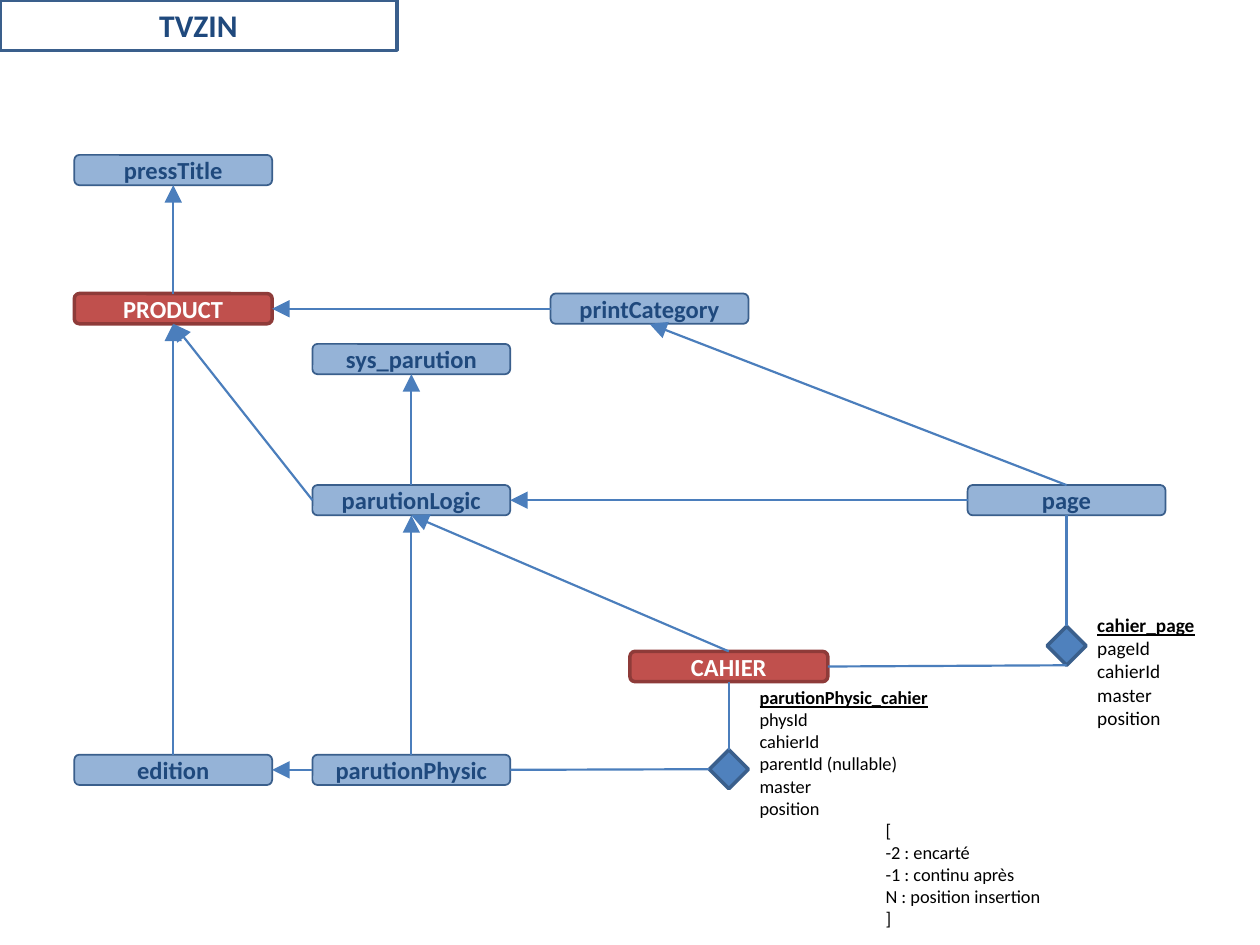
from lxml import etree
from pptx import Presentation
from pptx import util as u
from pptx.dml.color import RGBColor
from pptx.enum import shapes, text
from pptx.oxml.ns import qn

FONT = "Calibri"
BLUE, PALE, RED, NAVY = "4F81BD", "95B3D7", "C0504D", "1F497D"
EDGE, RED_EDGE, LINK = "3A5F8C", "8E3B39", "4B7EBC"
BOX_W, BOX_H, DIAMOND = 1.57, 0.24, 0.31
TOP, LEFT, BOTTOM, RIGHT = range(4)  # connection sites


def rgb(value):
    return RGBColor.from_string(value)


def write(p, content, size, color, bold=False, underline=False, align=None):
    p.alignment = align
    r = p.add_run()
    r.text = content
    r.font.name, r.font.size = FONT, u.Pt(size)
    r.font.bold, r.font.underline = bold, underline
    r.font.color.rgb = rgb(color)


prs = Presentation()
prs.slide_width, prs.slide_height = u.Inches(10), u.Inches(7.5)
s = prs.slides.add_slide(prs.slide_layouts[6])

# Title, entity boxes and association diamonds
RECT, ROUND, DIAM = (shapes.MSO_SHAPE.RECTANGLE, shapes.MSO_SHAPE.ROUNDED_RECTANGLE,
                     shapes.MSO_SHAPE.DIAMOND)
title = (RECT, 3.15, 0.4, None, EDGE, 2, 18, NAVY)
entity = (ROUND, BOX_W, BOX_H, PALE, EDGE, 1, 14, NAVY)
main_entity = (ROUND, BOX_W, BOX_H, RED, RED_EDGE, 2, 14, "FFFFFF")
diamond = (DIAM, DIAMOND, DIAMOND, BLUE, EDGE, 2, None, None)

nodes = {}
for name, x, y, style in [
    ("TVZIN", 0, 0, title),
    ("pressTitle", 0.59, 1.23, entity),
    ("PRODUCT", 0.59, 2.33, main_entity),
    ("edition", 0.59, 5.99, entity),
    ("sys_parution", 2.48, 2.73, entity),
    ("parutionLogic", 2.48, 3.85, entity),
    ("parutionPhysic", 2.48, 5.99, entity),
    ("printCategory", 4.37, 2.33, entity),
    ("page", 7.68, 3.85, entity),
    ("CAHIER", 5, 5.17, main_entity),
    ("physic_cahier", 5.63, 5.95, diamond),
    ("cahier_page", 8.31, 4.97, diamond),
]:
    kind, w, h, fill, edge, weight, size, color = style
    sp = s.shapes.add_shape(kind, u.Inches(x), u.Inches(y), u.Inches(w), u.Inches(h))
    sp.shadow.inherit = False
    if fill:
        sp.fill.solid()
        sp.fill.fore_color.rgb = rgb(fill)
    else:
        sp.fill.background()
    sp.line.color.rgb = rgb(edge)
    sp.line.width = u.Pt(weight)
    if size:
        tf = sp.text_frame
        tf.vertical_anchor = text.MSO_ANCHOR.MIDDLE
        write(tf.paragraphs[0], name, size, color, bold=True, align=text.PP_ALIGN.CENTER)
    nodes[name] = sp

# Relations: from, site, to, site, arrowhead
for start, start_site, end, end_site, arrow in [
    ("PRODUCT", TOP, "pressTitle", BOTTOM, True),
    ("edition", TOP, "PRODUCT", BOTTOM, True),
    ("parutionPhysic", LEFT, "edition", RIGHT, True),
    ("parutionPhysic", TOP, "parutionLogic", BOTTOM, True),
    ("parutionLogic", TOP, "sys_parution", BOTTOM, True),
    ("parutionLogic", LEFT, "PRODUCT", BOTTOM, True),
    ("printCategory", LEFT, "PRODUCT", RIGHT, True),
    ("page", LEFT, "parutionLogic", RIGHT, True),
    ("page", TOP, "printCategory", BOTTOM, True),
    ("CAHIER", TOP, "parutionLogic", BOTTOM, True),
    ("CAHIER", BOTTOM, "physic_cahier", TOP, False),
    ("parutionPhysic", RIGHT, "physic_cahier", LEFT, False),
    ("page", BOTTOM, "cahier_page", TOP, False),
    ("cahier_page", BOTTOM, "CAHIER", RIGHT, False),
]:
    c = s.shapes.add_connector(shapes.MSO_CONNECTOR.STRAIGHT, 0, 0, 0, 0)
    c.begin_connect(nodes[start], start_site)
    c.end_connect(nodes[end], end_site)
    c.line.color.rgb = rgb(LINK)
    c.line.width = u.Pt(1.25)
    if arrow:
        etree.SubElement(c.line._get_or_add_ln(), qn("a:tailEnd"),
                         type="triangle", w="lg", len="lg")
    etree.SubElement(c._element.spPr, qn("a:effectLst"))

# Field lists of the association tables; the last group is indented
for x, y, w, h, size, heading, fields, indented in [
    (8.61, 4.82, 0.98, 1.03, 11, "cahier_page",
     ["pageId", "cahierId", "master", "position"], []),
    (5.93, 5.4, 2.46, 2.04, 10.5, "parutionPhysic_cahier",
     ["physId", "cahierId", "parentId (nullable)", "master", "position"],
     ["[", "-2 : encarté", "-1 : continu après", "N : position insertion", "]"]),
]:
    tf = s.shapes.add_textbox(u.Inches(x), u.Inches(y), u.Inches(w), u.Inches(h)).text_frame
    tf.word_wrap = False
    tf.auto_size = text.MSO_AUTO_SIZE.SHAPE_TO_FIT_TEXT
    write(tf.paragraphs[0], heading, size, "000000", bold=True, underline=True)
    for field in fields:
        write(tf.add_paragraph(), field, size, "000000")
    for field in indented:
        p = tf.add_paragraph()
        p._p.get_or_add_pPr().set("marL", str(u.Inches(1)))
        write(p, field, size, "000000")

prs.save("out.pptx")
